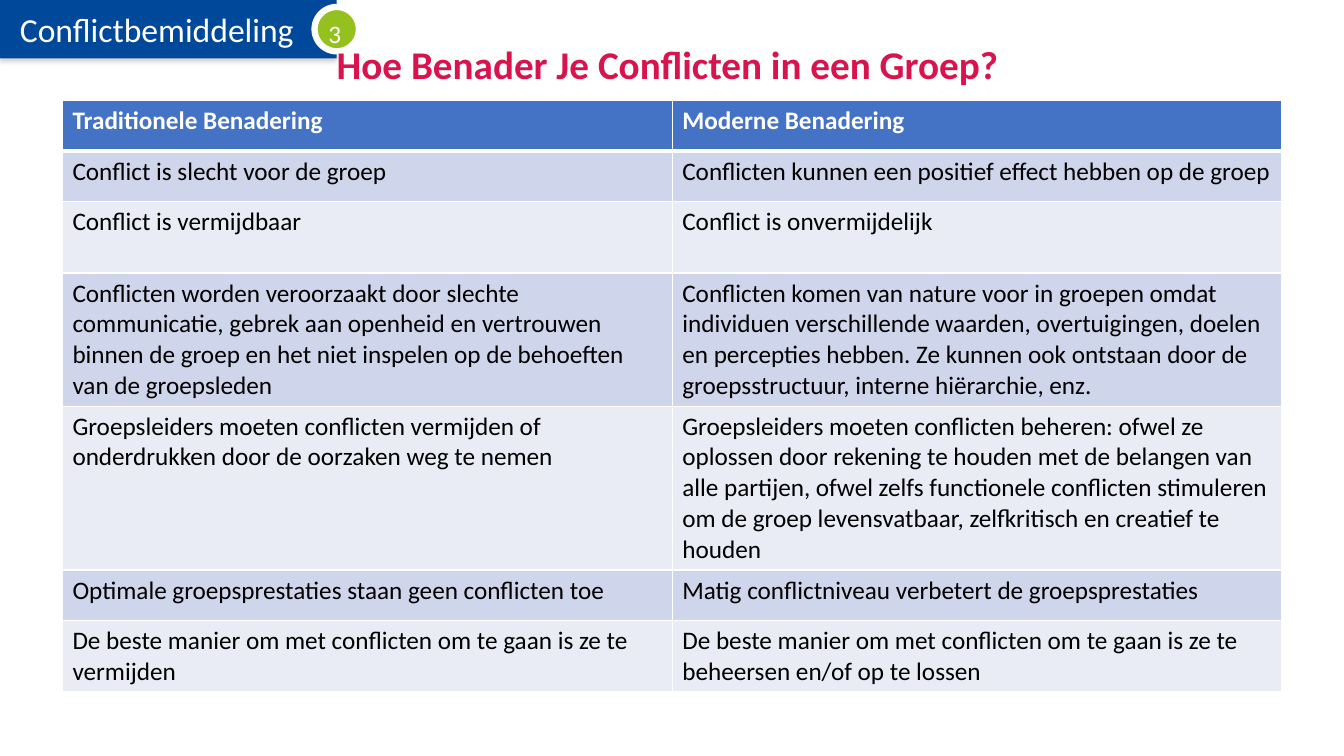
from dataclasses import dataclass

from lxml.etree import SubElement
from pptx import Presentation
from pptx.dml.color import RGBColor as Color
from pptx.enum.shapes import MSO_SHAPE as Shape
from pptx.enum.text import MSO_ANCHOR as Anchor, MSO_AUTO_SIZE as AutoSize, PP_ALIGN as Align
from pptx.oxml import parse_xml
from pptx.oxml.ns import nsdecls, qn
from pptx.util import Pt


@dataclass(frozen=True)
class Theme:
    """Colours and type sizes of the slide."""
    font: str = "Calibri"
    white: str = "FFFFFF"
    black: str = "000000"
    navy: str = "004899"
    green: str = "95C11F"
    crimson: str = "D8134D"
    header: str = "4472C4"
    bands: tuple = ("CFD5EA", "E9EBF5")
    title_size: int = 28
    banner_size: int = 24
    body_size: int = 18


THEME = Theme()

HEADINGS = ("Traditionele Benadering", "Moderne Benadering")
VIEWS = (
    ("Conflict is slecht voor de groep",
     "Conflicten kunnen een positief effect hebben op de groep"),
    ("Conflict is vermijdbaar", "Conflict is onvermijdelijk"),
    ("Conflicten worden veroorzaakt door slechte communicatie, gebrek aan openheid en "
     "vertrouwen binnen de groep en het niet inspelen op de behoeften van de groepsleden",
     "Conflicten komen van nature voor in groepen omdat individuen verschillende waarden, "
     "overtuigingen, doelen en percepties hebben. Ze kunnen ook ontstaan door de "
     "groepsstructuur, interne hiërarchie, enz."),
    ("Groepsleiders moeten conflicten vermijden of onderdrukken door de oorzaken weg te nemen",
     "Groepsleiders moeten conflicten beheren: ofwel ze oplossen door rekening te houden met "
     "de belangen van alle partijen, ofwel zelfs functionele conflicten stimuleren om de "
     "groep levensvatbaar, zelfkritisch en creatief te houden"),
    ("Optimale groepsprestaties staan geen conflicten toe",
     "Matig conflictniveau verbetert de groepsprestaties"),
    ("De beste manier om met conflicten om te gaan is ze te vermijden",
     "De beste manier om met conflicten om te gaan is ze te beheersen en/of op te lossen"),
)
ROW_HEIGHTS = (36, 36, 51, 95, 117, 36, 51)


def write(frame, text, size, color, bold=False, spacing=1.0):
    """Write one left-aligned paragraph into a text frame."""
    frame.word_wrap = True
    para = frame.paragraphs[0]
    para.alignment = Align.LEFT
    para.line_spacing = spacing
    span = para.add_run()
    span.text = text
    span.font.name = THEME.font
    span.font.size = Pt(size)
    span.font.bold = bold
    span.font.color.rgb = Color.from_string(color)


def paint(fill, color):
    """Give a fill one solid colour."""
    fill.solid()
    fill.fore_color.rgb = Color.from_string(color)


def cast_shadow(shape):
    """Replace the shape's effects with a soft shadow below it."""
    shape.shadow.inherit = False
    effects = shape.element.spPr.find(qn("a:effectLst"))
    effects.append(parse_xml(
        f'<a:outerShdw {nsdecls("a")} blurRad="{Pt(3.1)}" dist="{Pt(1.8)}" dir="5400000" '
        'algn="t" rotWithShape="0"><a:srgbClr val="808080"><a:alpha val="35000"/>'
        '</a:srgbClr></a:outerShdw>'))


def add_banner(page, left, top, width, height):
    """Draw the chapter banner with its numbered badge on the right edge."""
    banner = page.shapes.add_shape(Shape.RECTANGLE, Pt(left), Pt(top), Pt(width), Pt(height))
    paint(banner.fill, THEME.navy)
    banner.line.fill.background()
    cast_shadow(banner)
    banner.text_frame.margin_left = Pt(14.2)
    banner.text_frame.vertical_anchor = Anchor.MIDDLE
    write(banner.text_frame, "Conflictbemiddeling", THEME.banner_size, THEME.white)

    right = left + width
    badge = page.shapes.add_shape(
        Shape.OVAL, Pt(right - 15.8), Pt(top + 5), Pt(31.7), Pt(31.7))
    badge.shadow.inherit = False
    paint(badge.fill, THEME.green)
    badge.line.color.rgb = Color.from_string(THEME.white)
    badge.line.width = Pt(4.5)

    number = page.shapes.add_textbox(Pt(right - 13), Pt(top - 1.4), Pt(25.2), Pt(36.7))
    write(number.text_frame, "3", THEME.body_size, THEME.white, spacing=1.5)


def add_title(page, left, top, width, height):
    """Place the title in front of the banner."""
    title = page.shapes.title
    title.left, title.top, title.width, title.height = map(Pt, (left, top, width, height))
    title.text_frame.vertical_anchor = Anchor.MIDDLE
    title.text_frame.auto_size = AutoSize.NONE
    write(title.text_frame, "Hoe Benader Je Conflicten in een Groep?",
          THEME.title_size, THEME.crimson, bold=True, spacing=0.9)
    title.element.getparent().append(title.element)


def fill_cell(cell, text, color, background, bold, bottom):
    """Write, border and fill one table cell."""
    write(cell.text_frame, text, THEME.body_size, color, bold)
    properties = cell._tc.get_or_add_tcPr()
    for side, weight in (("L", 1), ("R", 1), ("T", 1), ("B", bottom)):
        border = SubElement(properties, qn(f"a:ln{side}"), w=str(Pt(weight)))
        solid = SubElement(border, qn("a:solidFill"))
        SubElement(solid, qn("a:srgbClr"), val=THEME.white)
    paint(cell.fill, background)


def add_comparison(page, left, top, width):
    """Set the two approaches side by side in a banded table."""
    rows = (HEADINGS, *VIEWS)
    table = page.shapes.add_table(
        len(rows), len(HEADINGS), Pt(left), Pt(top), Pt(width), Pt(sum(ROW_HEIGHTS))).table
    for column in table.columns:
        column.width = Pt(width / len(HEADINGS))
    for index, (texts, height) in enumerate(zip(rows, ROW_HEIGHTS)):
        table.rows[index].height = Pt(height)
        heading = index == 0
        color = THEME.white if heading else THEME.black
        background = THEME.header if heading else THEME.bands[(index - 1) % 2]
        for cell, text in zip(table.rows[index].cells, texts):
            fill_cell(cell, text, color, background, heading, 3 if heading else 1)


def main():
    """Build and save the slide."""
    deck = Presentation()
    deck.slide_width, deck.slide_height = Pt(960), Pt(540)
    page = deck.slides.add_slide(deck.slide_layouts[5])
    add_banner(page, 0, 0, 240.5, 41.8)
    add_title(page, 233.3, 23.8, 493.9, 47.5)
    add_comparison(page, 44.6, 72, 871.2)
    deck.save("out.pptx")


if __name__ == "__main__":
    main()
